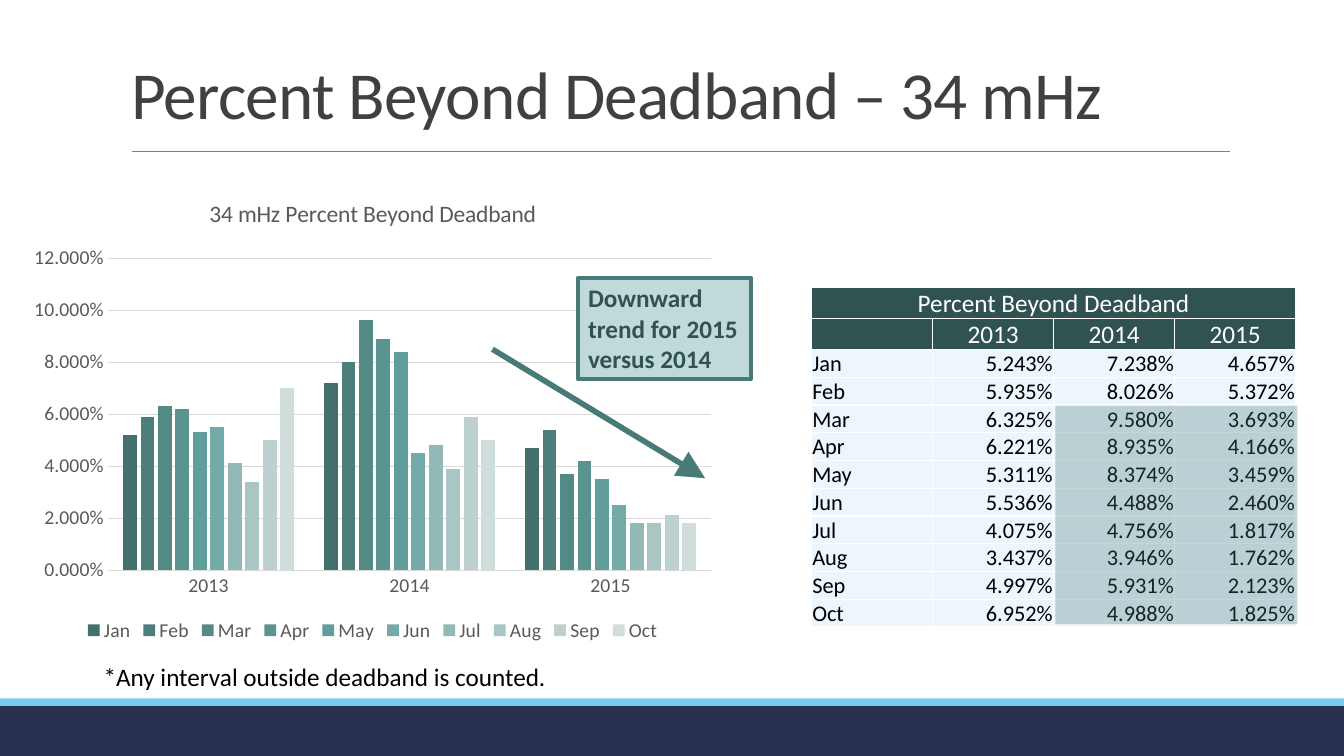
from lxml import etree
from pptx import Presentation
from pptx.chart.data import CategoryChartData
from pptx.dml.color import RGBColor
from pptx.enum.chart import XL_CHART_TYPE as ChartType, XL_LEGEND_POSITION as LegendPos, XL_TICK_MARK as Tick
from pptx.enum.shapes import MSO_CONNECTOR as Connector, MSO_SHAPE as Shape
from pptx.enum.text import MSO_ANCHOR as Anchor, PP_ALIGN as Align
from pptx.oxml import parse_xml
from pptx.oxml.ns import nsdecls, qn
from pptx.util import Cm, Pt

FONT = "Calibri"
WHITE = RGBColor(0xFF, 0xFF, 0xFF)
BLACK = RGBColor(0, 0, 0)
NAVY = RGBColor(0x27, 0x30, 0x4E)
SKY = RGBColor(0x76, 0xCD, 0xEE)
RULE_GREY = RGBColor(0x80, 0x80, 0x80)
TITLE_GREY = RGBColor(0x40, 0x40, 0x40)
LABEL_GREY = RGBColor(0x59, 0x59, 0x59)
GRID_GREY = RGBColor(0xD9, 0xD9, 0xD9)
TEAL = RGBColor(0x48, 0x7B, 0x78)
DARK_TEAL = RGBColor(0x30, 0x52, 0x50)
PALE_TEAL = RGBColor(0xC0, 0xDA, 0xD9)
ICE = RGBColor(0xEC, 0xF6, 0xFC)

SLIDE_W, SLIDE_H = 33.87, 19.05
YEARS = ("2013", "2014", "2015")
# Month, bar colour, percent beyond deadband for each year
MONTHS = [
    ("Jan", "43706D", (5.243, 7.238, 4.657)),
    ("Feb", "4C7E7B", (5.935, 8.026, 5.372)),
    ("Mar", "538A86", (6.325, 9.580, 3.693)),
    ("Apr", "599490", (6.221, 8.935, 4.166)),
    ("May", "5F9E9A", (5.311, 8.374, 3.459)),
    ("Jun", "74AAA7", (5.536, 4.488, 2.460)),
    ("Jul", "93B9B7", (4.075, 4.756, 1.817)),
    ("Aug", "A9C6C4", (3.437, 3.946, 1.762)),
    ("Sep", "BDD2D0", (4.997, 5.931, 2.123)),
    ("Oct", "CFDEDC", (6.952, 4.988, 1.825)),
]


def style_font(font, size, color, bold=False):
    font.name, font.size, font.bold = FONT, Pt(size), bold
    font.color.rgb = color


def add_run(paragraph, text, size, color, bold=False):
    run = paragraph.add_run()
    run.text = text
    style_font(run.font, size, color, bold)
    return run


def add_block(slide, left, top, width, height, fill):
    block = slide.shapes.add_shape(Shape.RECTANGLE, Cm(left), Cm(top), Cm(width), Cm(height))
    block.shadow.inherit = False
    block.fill.solid()
    block.fill.fore_color.rgb = fill
    block.line.fill.background()
    return block


def add_line(slide, x1, y1, x2, y2, color, weight):
    line = slide.shapes.add_connector(Connector.STRAIGHT, Cm(x1), Cm(y1), Cm(x2), Cm(y2))
    line.line.color.rgb = color
    line.line.width = Pt(weight)
    etree.SubElement(line._element.spPr, qn("a:effectLst"))
    return line


def add_footer_band(slide, top):
    add_block(slide, 0, top + 0.18, SLIDE_W, SLIDE_H - top - 0.18, NAVY)
    add_block(slide, 0, top, SLIDE_W, 0.18, SKY)


def add_title(slide, left, top, width, height):
    title = slide.shapes.title
    title.left, title.top, title.width, title.height = Cm(left), Cm(top), Cm(width), Cm(height)
    frame = title.text_frame
    frame.word_wrap = True
    frame.vertical_anchor = Anchor.BOTTOM
    heading = frame.paragraphs[0]
    heading.alignment = Align.LEFT
    heading.line_spacing = 0.85
    run = add_run(heading, "Percent Beyond Deadband – 34 mHz", 48, TITLE_GREY)
    run.font._element.set("spc", "-50")
    add_line(slide, left + 0.28, top + 3.03, left + 27.95, top + 3.03, RULE_GREY, 0.5)


def add_deadband_chart(slide, left, top, width, height):
    data = CategoryChartData(number_format="0.000%")
    data.categories = YEARS
    for month, _, percents in MONTHS:
        data.add_series(month, [round(percent / 100, 3) for percent in percents])
    chart = slide.shapes.add_chart(ChartType.COLUMN_CLUSTERED, Cm(left), Cm(top),
                                   Cm(width), Cm(height), data).chart
    style_font(chart.font, 14, LABEL_GREY)
    chart.has_title = True
    add_run(chart.chart_title.text_frame.paragraphs[0],
            "34 mHz Percent Beyond Deadband", 16.8, LABEL_GREY)
    chart.chart_title.include_in_layout = False
    chart.has_legend = True
    chart.legend.position = LegendPos.BOTTOM
    chart.legend.include_in_layout = False
    style_font(chart.legend.font, 14, LABEL_GREY)

    # Bars
    plot = chart.plots[0]
    plot.gap_width, plot.overlap = 219, -27
    plot.vary_by_categories = False
    for series, (_, color, _) in zip(plot.series, MONTHS):
        series.format.fill.solid()
        series.format.fill.fore_color.rgb = RGBColor.from_string(color)

    # Axes
    years, percents = chart.category_axis, chart.value_axis
    for axis in (years, percents):
        axis.major_tick_mark = axis.minor_tick_mark = Tick.NONE
        style_font(axis.tick_labels.font, 14, LABEL_GREY)
    percents.minimum_scale, percents.maximum_scale, percents.major_unit = 0, 0.12, 0.02
    percents.tick_labels.number_format = "0.000%"
    percents.tick_labels.number_format_is_linked = False
    percents.format.line.fill.background()
    for line in (years.format.line, percents.major_gridlines.format.line):
        line.color.rgb = GRID_GREY
        line.width = Pt(0.75)

    # Inner plot area as fractions of the chart box
    area = chart._chartSpace.chart.plotArea
    for old in area.findall(qn("c:layout")):
        area.remove(old)
    fractions = "".join(f'<c:{key} val="{value}"/>' for key, value in
                        (("x", 0.125), ("y", 0.17), ("w", 0.855), ("h", 0.667)))
    area.insert(0, parse_xml(
        f'<c:layout {nsdecls("c")}><c:manualLayout><c:layoutTarget val="inner"/>'
        f'<c:xMode val="edge"/><c:yMode val="edge"/>{fractions}</c:manualLayout></c:layout>'))


def add_trend_callout(slide, left, top, width, height):
    callout = add_block(slide, left, top, width, height, PALE_TEAL)
    callout.line.color.rgb = TEAL
    callout.line.width = Pt(3)
    frame = callout.text_frame
    frame.word_wrap = True
    frame.vertical_anchor = Anchor.TOP
    frame.paragraphs[0].alignment = Align.LEFT
    add_run(frame.paragraphs[0], "Downward trend for 2015 versus 2014", 18, DARK_TEAL, True)
    arrow = add_line(slide, left - 2.16, top + 1.8, left + 3.2, top + 5.05, TEAL, 4)
    etree.SubElement(arrow.line._get_or_add_ln(), qn("a:tailEnd"), type="triangle", w="lg", len="lg")


def add_footnote(slide, left, top, width, height):
    frame = slide.shapes.add_textbox(Cm(left), Cm(top), Cm(width), Cm(height)).text_frame
    frame.word_wrap = True
    add_run(frame.paragraphs[0], "*Any interval outside deadband is counted.", 18, BLACK)


def fill_cell(cell, text, size, color, fill, align):
    cell.fill.solid()
    cell.fill.fore_color.rgb = fill
    cell.vertical_anchor = Anchor.BOTTOM
    cell.margin_left = cell.margin_right = cell.margin_top = Cm(0.02)
    cell.margin_bottom = 0
    paragraph = cell.text_frame.paragraphs[0]
    paragraph.alignment = align
    paragraph.font.size = Pt(size)
    if text:
        add_run(paragraph, text, size, color)
    borders = [parse_xml(f'<a:{side} {nsdecls("a")} w="12700"><a:solidFill>'
                         f'<a:srgbClr val="{WHITE}"/></a:solidFill></a:{side}>')
               for side in ("lnL", "lnR", "lnT", "lnB")]
    for position, border in enumerate(borders):
        cell._tc.get_or_add_tcPr().insert(position, border)


def add_deadband_table(slide, left, top, width, head_h, row_h):
    rows = [("Percent Beyond Deadband", "", "", ""), ("", *YEARS)]
    rows += [(month, *(f"{percent:.3f}%" for percent in percents)) for month, _, percents in MONTHS]
    body_h = row_h * len(MONTHS)
    table = slide.shapes.add_table(len(rows), 4, Cm(left), Cm(top), Cm(width),
                                   Cm(2 * head_h + body_h)).table
    for r, texts in enumerate(rows):
        table.rows[r].height = Cm(head_h if r < 2 else row_h)
        for c, text in enumerate(texts):
            if r < 2:
                fill_cell(table.cell(r, c), text, 18, WHITE, DARK_TEAL, Align.CENTER)
            else:
                fill_cell(table.cell(r, c), text, 16, BLACK, ICE, Align.RIGHT if c else Align.LEFT)
    table.cell(0, 0).merge(table.cell(0, 3))

    # Tint over 2014 and 2015 from March on
    tint = add_block(slide, left + width / 2 + 0.05, top + 2 * head_h + 2 * row_h + 0.04,
                     width / 2, 5.51, TEAL)
    color = tint.fill._xPr.find(qn("a:solidFill"))[0]
    etree.SubElement(color, qn("a:alpha"), val="30000")


def main():
    deck = Presentation()
    deck.slide_width, deck.slide_height = Cm(SLIDE_W), Cm(SLIDE_H)
    slide = deck.slides.add_slide(deck.slide_layouts[5])
    add_footer_band(slide, 17.6)
    add_title(slide, 3.05, 0.79, 27.94, 2.69)
    add_deadband_chart(slide, 0.5, 4.5, 17.78, 11.79)
    add_trend_callout(slide, 14.57, 7, 4.36, 2.56)
    add_footnote(slide, 2.36, 16.54, 26.24, 1.03)
    add_deadband_table(slide, 20.45, 7.24, 12.2, 0.77, 0.7)
    deck.save("out.pptx")


if __name__ == "__main__":
    main()
